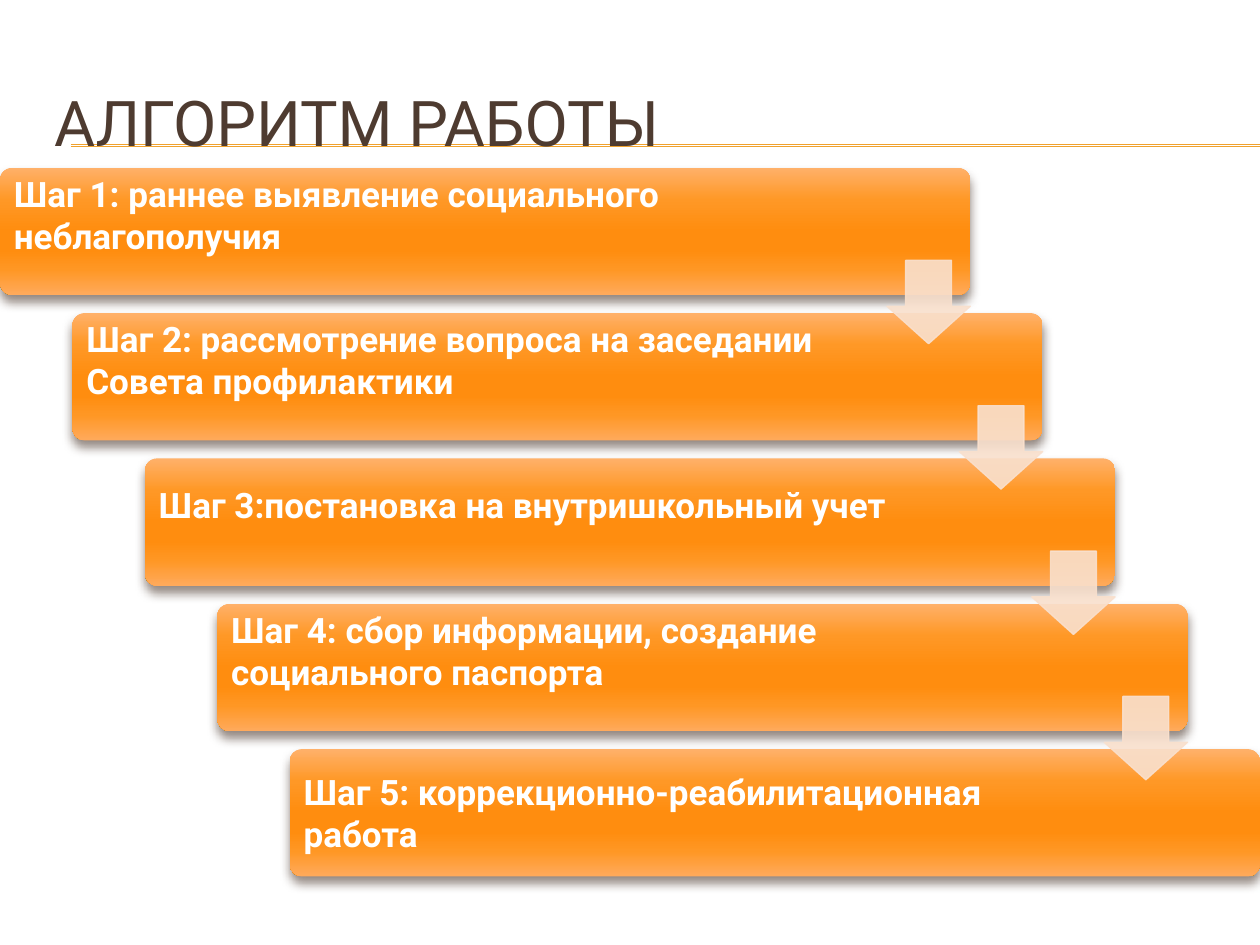
from lxml import etree
from pptx import Presentation
from pptx.dml.color import RGBColor
from pptx.enum import shapes, text
from pptx.oxml import ns
from pptx.util import Cm, Pt

TITLE = "АЛГОРИТМ РАБОТЫ"
STEPS = [
    "Шаг 1: раннее выявление социального неблагополучия",
    "Шаг 2: рассмотрение вопроса на заседании Совета профилактики",
    "Шаг 3:постановка на внутришкольный учет",
    "Шаг 4: сбор информации, создание социального паспорта",
    "Шаг 5: коррекционно-реабилитационная работа",
]

FONT = "Roboto"
BROWN = RGBColor(0x4E, 0x3B, 0x30)
GOLD = RGBColor(0xF0, 0xA2, 0x2E)
WHITE = RGBColor(0xFF, 0xFF, 0xFF)
PEACH = RGBColor(0xF9, 0xE0, 0xCD)
BAR_GRADIENT = [
    (0, RGBColor(0xFF, 0xB1, 0x6A)),
    (25, RGBColor(0xFF, 0x98, 0x26)),
    (50, RGBColor(0xFF, 0x8D, 0x0F)),
    (65, RGBColor(0xFF, 0x8D, 0x0F)),
    (80, RGBColor(0xFF, 0x97, 0x24)),
    (100, RGBColor(0xFF, 0xAA, 0x5C)),
]

SLIDE_W, SLIDE_H = 25.4, 19.05
BAR_W, BAR_H = 19.56, 2.57
FIRST_TOP, PITCH = 3.38, 2.93
INDENT = (SLIDE_W - BAR_W) / (len(STEPS) - 1)
ARROW, ARROW_DROP = 1.68, 1.87
LABEL_W, LABEL_GAP, LABEL_INSET = 16.28, 0.08, 0.2


def sub(parent, tag, **attributes):
    child = etree.SubElement(parent, ns.qn(tag))
    for name, value in attributes.items():
        child.set(name, str(value))
    return child


def add_color(parent, color, alpha=None):
    node = sub(parent, "a:srgbClr", val=color)
    if alpha is not None:
        sub(node, "a:alpha", val=alpha * 1000)


def add_label(slide, wording, box, size, color, bold=False):
    label = slide.shapes.add_textbox(*(Cm(v) for v in box))
    frame = label.text_frame
    frame.word_wrap = True
    frame.vertical_anchor = text.MSO_ANCHOR.MIDDLE
    frame.text = wording
    font = frame.paragraphs[0].runs[0].font
    font.name, font.size, font.bold = FONT, Pt(size), bold
    font.color.rgb = color
    return frame


def add_rule(slide, top):
    rule = slide.shapes.add_connector(
        shapes.MSO_CONNECTOR.STRAIGHT, Cm(1.43), Cm(top), Cm(SLIDE_W), Cm(top))
    rule.line.color.rgb = GOLD
    rule.line.width = Pt(0.75)
    sub(rule._element.spPr, "a:effectLst")


def add_bar(slide, left, top):
    bar = slide.shapes.add_shape(
        shapes.MSO_SHAPE.ROUNDED_RECTANGLE, Cm(left), Cm(top), Cm(BAR_W), Cm(BAR_H))
    bar.adjustments[0] = 0.1
    bar.line.fill.background()
    bar.fill.gradient()
    bar.fill.gradient_angle = 270
    properties = bar._element.spPr
    stops = properties.find(".//" + ns.qn("a:gsLst"))
    for stop in list(stops):
        stops.remove(stop)
    for percent, color in BAR_GRADIENT:
        add_color(sub(stops, "a:gs", pos=percent * 1000), color)
    bar.shadow.inherit = False
    shadow = sub(properties.find(ns.qn("a:effectLst")), "a:outerShdw",
                 blurRad=Pt(6), dist=Pt(4), dir=5400000, rotWithShape=0)
    add_color(shadow, BROWN, 60)


def add_arrow(slide, left, top):
    arrow = slide.shapes.add_shape(
        shapes.MSO_SHAPE.DOWN_ARROW, Cm(left), Cm(top), Cm(ARROW), Cm(ARROW))
    arrow.adjustments[0], arrow.adjustments[1] = 0.55, 0.45
    arrow.shadow.inherit = False
    arrow.fill.solid()
    arrow.fill.fore_color.rgb = PEACH
    arrow.line.color.rgb = PEACH
    arrow.line.width = Pt(0.79)
    for color in arrow._element.spPr.iter(ns.qn("a:srgbClr")):
        sub(color, "a:alpha", val=90000)


def main():
    deck = Presentation()
    deck.slide_width, deck.slide_height = Cm(SLIDE_W), Cm(SLIDE_H)
    slide = deck.slides.add_slide(deck.slide_layouts[6])

    for top in (2.92, 2.95):
        add_rule(slide, top)
    add_label(slide, TITLE, (0.84, 1.27, 24.13, 2.34), 36, BROWN)

    corners = [(i * INDENT, FIRST_TOP + i * PITCH) for i in range(len(STEPS))]
    for (left, top), step in zip(corners, STEPS):
        add_bar(slide, left, top)
        box = (left + LABEL_GAP, top + LABEL_GAP, LABEL_W, BAR_H - 2 * LABEL_GAP)
        frame = add_label(slide, step, box, 20, WHITE, bold=True)
        frame.margin_left = frame.margin_right = Cm(LABEL_INSET)
        # Every label but the last sits above the middle, clear of the arrow
        last = step == STEPS[-1]
        frame.margin_top = Cm(LABEL_INSET if last else 0)
        frame.margin_bottom = Cm(LABEL_INSET if last else 0.69)

    for left, top in corners[:-1]:
        add_arrow(slide, left + BAR_W - ARROW, top + ARROW_DROP)

    deck.save("out.pptx")


if __name__ == "__main__":
    main()
